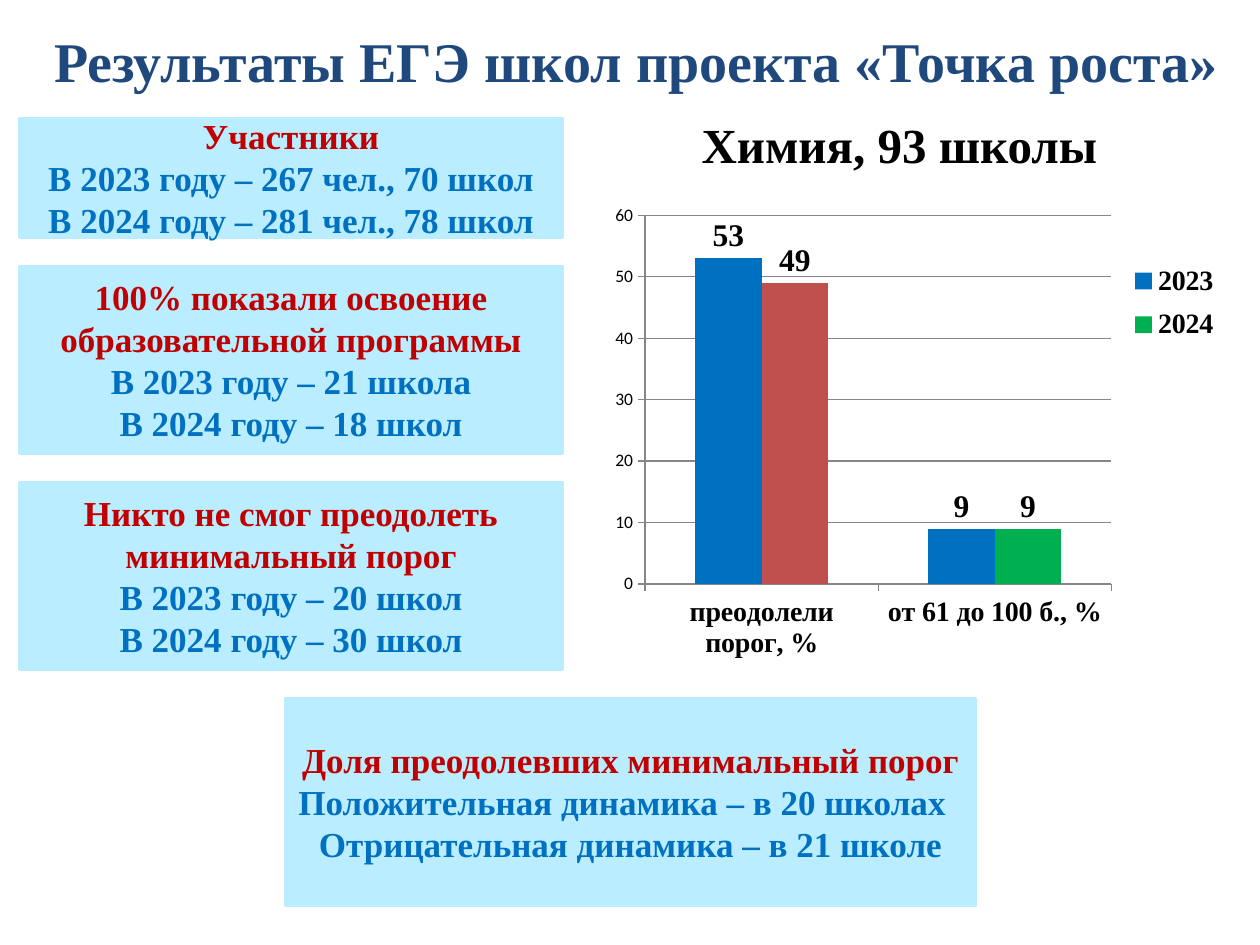
"""Build the slide on chemistry exam results of the project schools."""
from lxml import etree
from pptx import Presentation
from pptx.chart.data import CategoryChartData
from pptx.dml.color import RGBColor
from pptx.enum.chart import XL_CHART_TYPE, XL_LABEL_POSITION, XL_LEGEND_POSITION
from pptx.enum.shapes import MSO_SHAPE
from pptx.enum.text import MSO_ANCHOR, PP_ALIGN
from pptx.oxml.ns import qn
from pptx.util import Inches, Pt

COLUMN = XL_CHART_TYPE.COLUMN_CLUSTERED
OUTER = XL_LABEL_POSITION.OUTSIDE_END
RIGHT = XL_LEGEND_POSITION.RIGHT
RECT = MSO_SHAPE.RECTANGLE
TOP, MIDDLE = MSO_ANCHOR.TOP, MSO_ANCHOR.MIDDLE
LEFT, CENTER = PP_ALIGN.LEFT, PP_ALIGN.CENTER
SERIF = "Times New Roman"
HEX = {"navy": "1F497D", "black": "000000", "sky": "B9EDFF", "red": "C00000",
       "blue": "0070C0", "green": "00B050", "brick": "C0504D", "grey": "868686"}
COLOR = {name: RGBColor.from_string(code) for name, code in HEX.items()}
UNIT = Inches(0.1)


def write(frame, lines, size, anchor=TOP, wrap=True):
    """Fill a frame with (text, color, align) lines."""
    frame.word_wrap = wrap
    frame.vertical_anchor = anchor
    for i, (text, color, align) in enumerate(lines):
        par = frame.paragraphs[0] if i == 0 else frame.add_paragraph()
        par.alignment = align
        run = par.add_run()
        run.text = text
        font = run.font
        font.name, font.size, font.bold = SERIF, Pt(size), True
        font.color.rgb = COLOR[color]


def place(parent, index, shares, inner=False):
    """Pin a chart part to shares (x, y, w, h) of the chart."""
    for old in parent.findall(qn("c:layout")):
        parent.remove(old)
    layout = etree.Element(qn("c:layout"))
    manual = etree.SubElement(layout, qn("c:manualLayout"))
    pairs = [("layoutTarget", "inner")] if inner else []
    pairs += [("xMode", "edge"), ("yMode", "edge")]
    pairs += zip("xywh", map(str, shares))
    for tag, val in pairs:
        etree.SubElement(manual, qn(f"c:{tag}")).set("val", val)
    parent.insert(index, layout)


deck = Presentation()
deck.slide_width, deck.slide_height = 100 * UNIT, 75 * UNIT
slide = deck.slides.add_slide(deck.slide_layouts[5])
shapes = slide.shapes

title = shapes.title
title.left, title.top, title.width, title.height = [
    int(n * UNIT) for n in (3.3, 1.6, 96.7, 6.4)]
write(title.text_frame, [("Результаты ЕГЭ школ проекта «Точка роста»", "navy", LEFT)],
      32, wrap=False)

head = shapes.add_textbox(*[int(n * UNIT) for n in (54.7, 8.6, 33.8, 5.7)])
write(head.text_frame, [("Химия, 93 школы", "black", LEFT)], 28, wrap=False)

cards = [
    (1.6, 43, 9.4, CENTER, "Участники",
     "В 2023 году – 267 чел., 70 школ", "В 2024 году – 281 чел., 78 школ"),
    (1.6, 43, 14.8, CENTER, "100% показали освоение образовательной программы",
     "В 2023 году – 21 школа", "В 2024 году – 18 школ"),
    (1.6, 43, 14.8, CENTER, "Никто не смог преодолеть минимальный порог",
     "В 2023 году – 20 школ", "В 2024 году – 30 школ"),
    (22.7, 54.7, 16.4, LEFT, "Доля преодолевших минимальный порог",
     "Положительная динамика – в 20 школах", "Отрицательная динамика – в 21 школе"),
]
row, gap = 9.4, 2.35
for col, width, height, align, topic, first, last in cards:
    card = shapes.add_shape(RECT, *[int(n * UNIT) for n in (col, row, width, height)])
    card.shadow.inherit = False
    card.fill.solid()
    card.fill.fore_color.rgb = COLOR["sky"]
    card.line.color.rgb = COLOR["sky"]
    card.line.width = Pt(2)
    write(card.text_frame, [(topic, "red", CENTER), (first, "blue", align),
                            (last, "blue", CENTER)], 20, MIDDLE)
    row += height + gap

data = CategoryChartData()
data.categories = ["преодолели порог, %", "от 61 до 100 б., %"]
data.add_series("2023", [53, 9])
data.add_series("2024", [49, 9])
spot = [int(n * UNIT) for n in (47.7, 15.6, 50, 37.5)]
chart = shapes.add_chart(COLUMN, *spot, data).chart
chart.has_title = False
chart.font.name, chart.font.size = "Calibri", Pt(10)
chart.font.color.rgb = COLOR["black"]
chart.has_legend = True
legend = chart.legend
legend.position = RIGHT
legend.include_in_layout = False

plot = chart.plots[0]
plot.gap_width, plot.overlap = 150, 0
plot.vary_by_categories = False
fonts = [(legend.font, 16), (chart.category_axis.tick_labels.font, 16)]
for series, color in zip(plot.series, ("blue", "green")):
    series.format.fill.solid()
    series.format.fill.fore_color.rgb = COLOR[color]
    labels = series.data_labels
    labels.show_value = True
    labels.position = OUTER
    fonts.append((labels.font, 18))
for font, size in fonts:
    font.name, font.size, font.bold = SERIF, Pt(size), True
    font.color.rgb = COLOR["black"]
fill = plot.series[1].points[0].format.fill
fill.solid()
fill.fore_color.rgb = COLOR["brick"]

scale = chart.value_axis
scale.minimum_scale, scale.maximum_scale, scale.major_unit = 0, 60, 10
scale.has_major_gridlines = True
for part in (scale, scale.major_gridlines, chart.category_axis):
    part.format.line.color.rgb = COLOR["grey"]
    part.format.line.width = Pt(0.75)

area = chart.element.find(f".//{qn('c:plotArea')}") if hasattr(chart, "element") \
    else chart._chartSpace.find(f".//{qn('c:plotArea')}")
place(area, 0, (0.07, 0.04, 0.74, 0.78), inner=True)
place(area.getnext(), 1, (0.83, 0.12, 0.16, 0.21))

deck.save("out.pptx")
